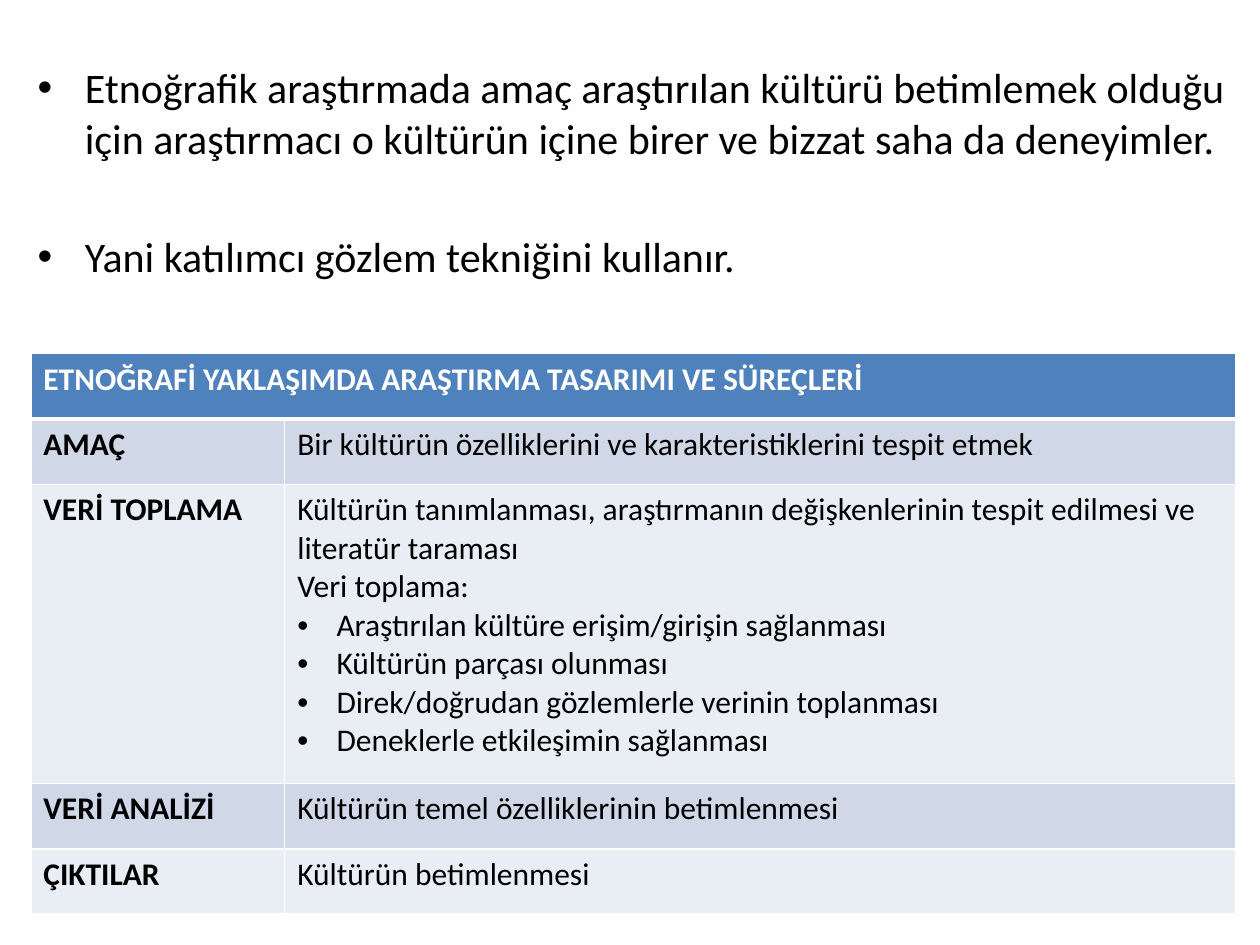
from dataclasses import dataclass

import pptx
import pptx.dml.color
import pptx.oxml
import pptx.oxml.ns
import pptx.util
from pptx.util import Cm, Pt

COLORS = {
    "header": "4F81BD",
    "band_dark": "D0D8E8",
    "band_light": "E9EDF4",
    "white": "FFFFFF",
    "black": "000000",
}
FONT = "Calibri"


@dataclass
class Step:
    label: str
    lines: list[str]
    height: float
    bullets: tuple[str, ...] = ()


ROW_H = 1.32
TITLE = "ETNOĞRAFİ YAKLAŞIMDA ARAŞTIRMA TASARIMI VE SÜREÇLERİ"
STEPS = [
    Step("AMAÇ", ["Bir kültürün özelliklerini ve karakteristiklerini tespit etmek"], ROW_H),
    Step(
        "VERİ TOPLAMA",
        [
            "Kültürün tanımlanması, araştırmanın değişkenlerinin tespit edilmesi ve literatür taraması",
            "Veri toplama:",
        ],
        6.02,
        (
            "Araştırılan kültüre erişim/girişin sağlanması",
            "Kültürün parçası olunması",
            "Direk/doğrudan gözlemlerle verinin toplanması",
            "Deneklerle etkileşimin sağlanması",
        ),
    ),
    Step("VERİ ANALİZİ", ["Kültürün temel özelliklerinin betimlenmesi"], ROW_H),
    Step("ÇIKTILAR", ["Kültürün betimlenmesi"], ROW_H),
]


def rgb(name: str) -> pptx.dml.color.RGBColor:
    return pptx.dml.color.RGBColor.from_string(COLORS[name])


def add_text(tf, text: str, *, size: float = 18, color: str = "black", bold: bool = False,
             indent: float = 0, before: float = 0) -> None:
    """Fill the empty first paragraph or append one; an indent (cm) adds a bullet."""
    p = tf.paragraphs[0] if not tf.text else tf.add_paragraph()
    p.space_before = Pt(before)
    if indent:
        pPr = p._p.get_or_add_pPr()
        pPr.set("marL", str(Cm(indent)))
        pPr.set("indent", str(-Cm(indent)))
        ns = pptx.oxml.ns.nsdecls("a")
        pPr.append(pptx.oxml.parse_xml(f'<a:buFont {ns} typeface="Arial"/>'))
        pPr.append(pptx.oxml.parse_xml(f'<a:buChar {ns} char="•"/>'))
    r = p.add_run()
    r.text = text
    r.font.name = FONT
    r.font.size = Pt(size)
    r.font.bold = bold
    r.font.color.rgb = rgb(color)


def style_cell(cell, fill: str, bottom: float = 1) -> None:
    """Add white borders, then the fill, in the order the schema requires."""
    tcPr = cell._tc.get_or_add_tcPr()
    ns = pptx.oxml.ns.nsdecls("a")
    for side, width in {"L": 1, "R": 1, "T": 1, "B": bottom}.items():
        tcPr.append(pptx.oxml.parse_xml(
            f'<a:ln{side} {ns} w="{Pt(width)}"><a:solidFill>'
            f'<a:srgbClr val="{COLORS["white"]}"/></a:solidFill></a:ln{side}>'))
    cell.fill.solid()
    cell.fill.fore_color.rgb = rgb(fill)


def add_process_table(slide) -> None:
    heights = [ROW_H] + [step.height for step in STEPS]
    widths = [5.12, 19.18]
    table = slide.shapes.add_table(len(heights), len(widths), Cm(0.62), Cm(7.13),
                                   Cm(sum(widths)), Cm(sum(heights))).table
    table.horz_banding = False
    for col, width in zip(table.columns, widths):
        col.width = Cm(width)
    for row, height in zip(table.rows, heights):
        row.height = Cm(height)

    for cell in table.rows[0].cells:
        style_cell(cell, "header", bottom=3)
    title = table.cell(0, 0)
    title.merge(table.cell(0, 1))
    add_text(title.text_frame, TITLE, color="white", bold=True)

    for i, step in enumerate(STEPS, start=1):
        label, detail = table.rows[i].cells
        for cell in (label, detail):
            style_cell(cell, "band_dark" if i % 2 else "band_light", bottom=1)
        add_text(label.text_frame, step.label, bold=True)
        for line in step.lines:
            add_text(detail.text_frame, line)
        for line in step.bullets:
            add_text(detail.text_frame, line, indent=0.79)


def add_intro(slide) -> None:
    tf = slide.shapes.add_textbox(Cm(0.51), Cm(1.12), Cm(24.64), Cm(4.8)).text_frame
    tf.word_wrap = True
    add_text(tf, "Etnoğrafik araştırmada amaç araştırılan kültürü betimlemek olduğu için "
                 "araştırmacı o kültürün içine birer ve bizzat saha da deneyimler.",
             size=24, indent=0.95, before=4.8)
    add_text(tf, "Yani katılımcı gözlem tekniğini kullanır.", size=24, indent=0.95, before=38.8)


def main() -> None:
    prs = pptx.Presentation()
    prs.slide_width, prs.slide_height = Cm(25.4), Cm(19.05)
    slide = prs.slides.add_slide(prs.slide_layouts[6])
    add_process_table(slide)
    add_intro(slide)
    prs.save("out.pptx")


if __name__ == "__main__":
    main()
